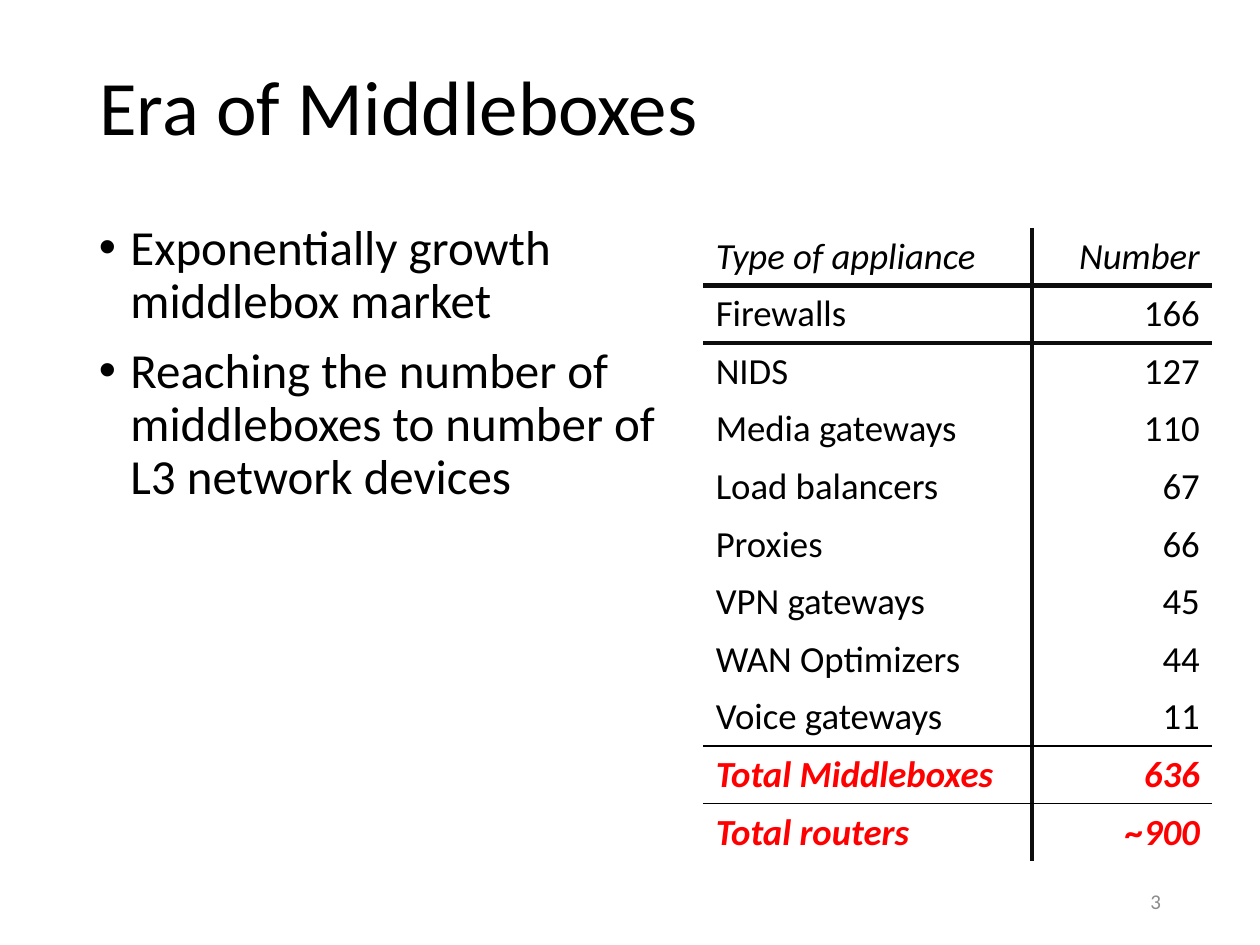
from lxml import etree
from pptx import Presentation
from pptx.dml.color import RGBColor
from pptx.enum.text import MSO_ANCHOR, MSO_AUTO_SIZE, PP_ALIGN
from pptx.oxml.ns import qn
from pptx.util import Pt

LEFT, RIGHT = PP_ALIGN.LEFT, PP_ALIGN.RIGHT
TOP, MIDDLE = MSO_ANCHOR.TOP, MSO_ANCHOR.MIDDLE
NO_AUTOFIT = MSO_AUTO_SIZE.NONE
FONT = "Calibri"
COLORS = {"text": "000000", "rule": "0D0D0D", "total": "FF0000", "number": "8C8C8C"}

APPLIANCES = [
    ("Type of appliance", "Number"),
    ("Firewalls", "166"),
    ("NIDS", "127"),
    ("Media gateways", "110"),
    ("Load balancers", "67"),
    ("Proxies", "66"),
    ("VPN gateways", "45"),
    ("WAN Optimizers", "44"),
    ("Voice gateways", "11"),
    ("Total Middleboxes", "636"),
    ("Total routers", "~900"),
]
FIRST_TOTAL = 9
# Row index -> width and colour of the line below that row
ROW_RULES = {0: (3, "rule"), 1: (3, "rule"), 8: (1, "text"), 9: (0.5, "text")}
COLUMN_RULE = (3, "rule")


def write(p, text, size, color="text", align=LEFT, bold=False, italic=False, spacing=1.0):
    p.alignment = align
    p.line_spacing = spacing
    r = p.add_run()
    r.text = text
    r.font.name = FONT
    r.font.size = Pt(size)
    r.font.bold = bold
    r.font.italic = italic
    r.font.color.rgb = RGBColor.from_string(COLORS[color])


def set_borders(cell, **rules):
    """Draw the given edges (L, R, T, B) and clear the others."""
    tcPr = cell._tc.get_or_add_tcPr()
    for i, edge in enumerate("LRTB"):
        ln = etree.Element(qn(f"a:ln{edge}"))
        rule = rules.get(edge)
        if rule:
            width, color = rule
            ln.set("w", str(Pt(width)))
            fill = etree.SubElement(ln, qn("a:solidFill"))
            etree.SubElement(fill, qn("a:srgbClr"), val=COLORS[color])
        else:
            etree.SubElement(ln, qn("a:noFill"))
        tcPr.insert(i, ln)


prs = Presentation()
prs.slide_width, prs.slide_height = Pt(720), Pt(540)
slide = prs.slides.add_slide(prs.slide_layouts[5])

# Title
title = slide.shapes.title
title.left, title.top, title.width, title.height = Pt(49.5), Pt(28.8), Pt(621), Pt(68.4)
tf = title.text_frame
tf.auto_size = NO_AUTOFIT
tf.vertical_anchor = MIDDLE
write(tf.paragraphs[0], "Era of Middleboxes", 44, spacing=0.9)

# Bullets
body = slide.shapes.add_textbox(Pt(49.5), Pt(123.8), Pt(357), Pt(363))
tf = body.text_frame
tf.word_wrap = True
tf.auto_size = NO_AUTOFIT
tf.vertical_anchor = TOP
bullets = [
    "Exponentially growth middlebox market",
    "Reaching the number of middleboxes to number of L3 network devices",
]
for i, text in enumerate(bullets):
    p = tf.add_paragraph() if i else tf.paragraphs[0]
    write(p, text, 28, spacing=0.9)
    p.space_before = Pt(10)
    pPr = p._p.get_or_add_pPr()
    pPr.set("marL", str(Pt(18)))
    pPr.set("indent", str(Pt(-18)))
    etree.SubElement(pPr, qn("a:buFont"), typeface="Arial")
    etree.SubElement(pPr, qn("a:buChar"), char="•")

# Appliance table
row_height = 32.9
frame = slide.shapes.add_table(
    len(APPLIANCES), 2, Pt(401.8), Pt(130.2), Pt(291), Pt(row_height * len(APPLIANCES))
)
table = frame.table
table.first_row = table.horz_banding = False
table.columns[0].width, table.columns[1].width = Pt(188), Pt(103)
for i, row in enumerate(APPLIANCES):
    table.rows[i].height = Pt(row_height)
    total = i >= FIRST_TOTAL
    for j, text in enumerate(row):
        cell = table.cell(i, j)
        cell.fill.background()
        write(
            cell.text_frame.paragraphs[0], text, 21,
            color="total" if total else "text",
            align=RIGHT if j else LEFT,
            bold=total, italic=total or i == 0,
        )
        side = "L" if j else "R"
        set_borders(cell, T=ROW_RULES.get(i - 1), B=ROW_RULES.get(i), **{side: COLUMN_RULE})

# Slide number
number = slide.shapes.add_textbox(Pt(508.5), Pt(500.5), Pt(162), Pt(28.8))
tf = number.text_frame
tf.word_wrap = True
tf.vertical_anchor = MIDDLE
write(tf.paragraphs[0], "3", 12, color="number", align=RIGHT)

prs.save("out.pptx")
